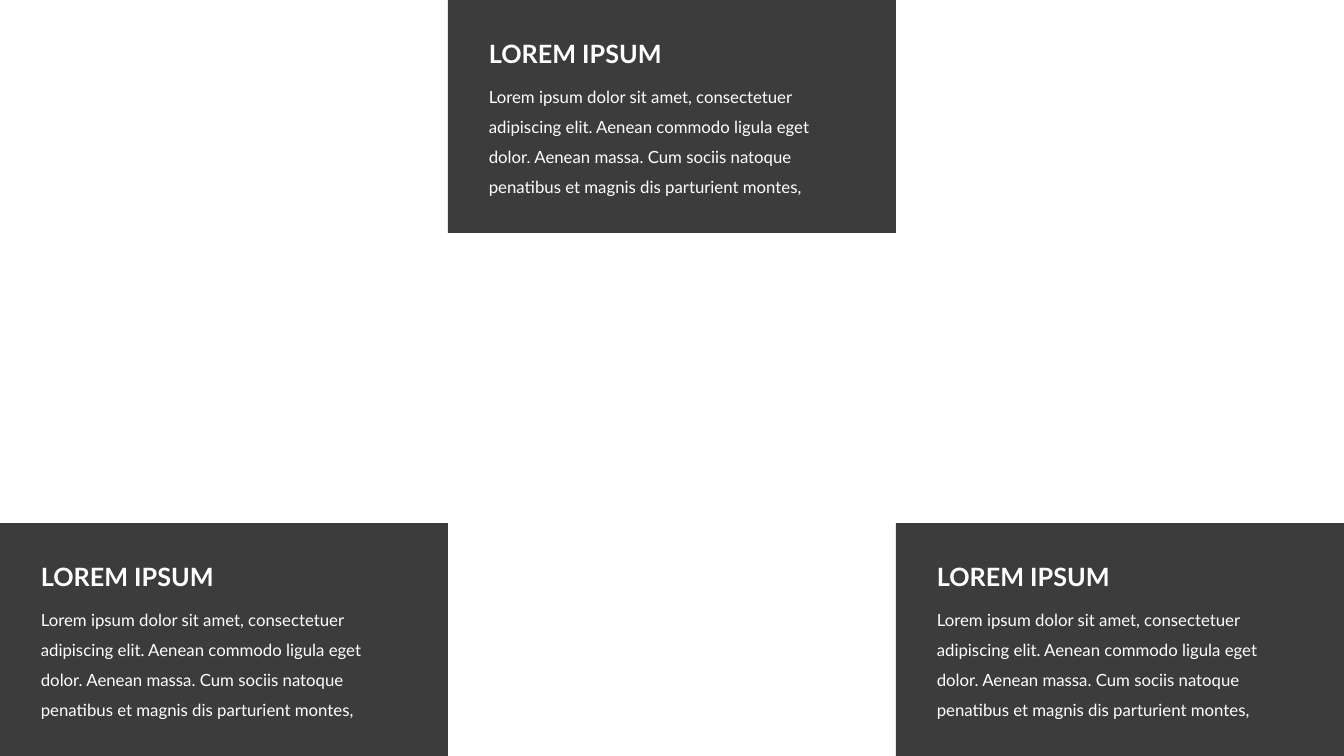
import pptx
import pptx.dml.color
import pptx.enum.shapes
import pptx.enum.text
import pptx.oxml
import pptx.oxml.ns
import pptx.util

Cm = pptx.util.Cm
DARK = pptx.dml.color.RGBColor(0x1A, 0x1A, 0x1A)
WHITE = pptx.dml.color.RGBColor(0xFF, 0xFF, 0xFF)
HEAD = "LOREM IPSUM"
BODY = (
    "Lorem ipsum dolor sit amet, consectetuer adipiscing elit. "
    "Aenean commodo ligula eget dolor. Aenean massa. "
    "Cum sociis natoque penatibus et magnis dis parturient montes,"
)


def add_text(text, left, top, high, size, bold=False, space=1.0):
    box = slide.shapes.add_textbox(left, top, Cm(9.7), high)
    frame = box.text_frame
    frame.word_wrap = True
    frame.auto_size = pptx.enum.text.MSO_AUTO_SIZE.SHAPE_TO_FIT_TEXT
    para = frame.paragraphs[0]
    para.line_spacing = space
    run = para.add_run()
    run.text = text
    run.font.name = "Lato"
    run.font.size = pptx.util.Pt(size)
    run.font.bold = bold
    run.font.color.rgb = WHITE


deck = pptx.Presentation()
deck.slide_width = Cm(33.87)
deck.slide_height = Cm(19.05)
slide = deck.slides.add_slide(deck.slide_layouts[6])

wide = deck.slide_width // 3
high = Cm(5.87)
low = deck.slide_height - high
spots = [(col * wide, top) for col, top in enumerate([low, 0, low])]

for left, top in spots:
    card = slide.shapes.add_shape(
        pptx.enum.shapes.MSO_SHAPE.RECTANGLE, left, top, wide, high
    )
    card.shadow.inherit = False
    card.line.fill.background()
    card.fill.solid()
    card.fill.fore_color.rgb = DARK
    tint = card.fill._xPr.find(".//" + pptx.oxml.ns.qn("a:srgbClr"))
    alpha = pptx.oxml.parse_xml(
        f'<a:alpha {pptx.oxml.ns.nsdecls("a")} val="85000"/>'
    )
    tint.append(alpha)

for left, top in spots:
    inset = left + Cm(0.78)
    add_text(HEAD, inset, top + Cm(0.84), Cm(1.03), 18, bold=True)
    add_text(BODY, inset, top + Cm(1.8), Cm(3.23), 12, space=1.5)

deck.save("out.pptx")
